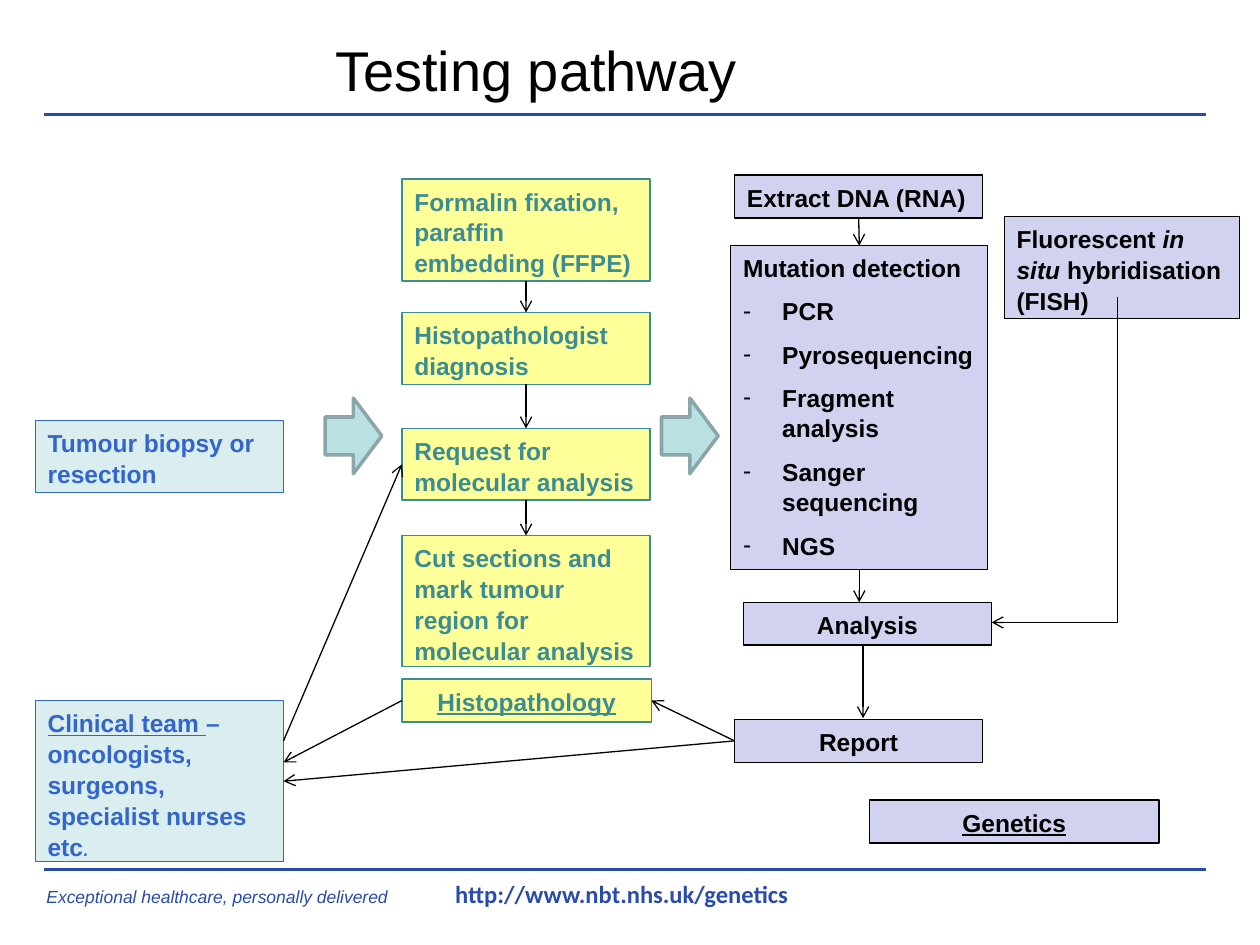
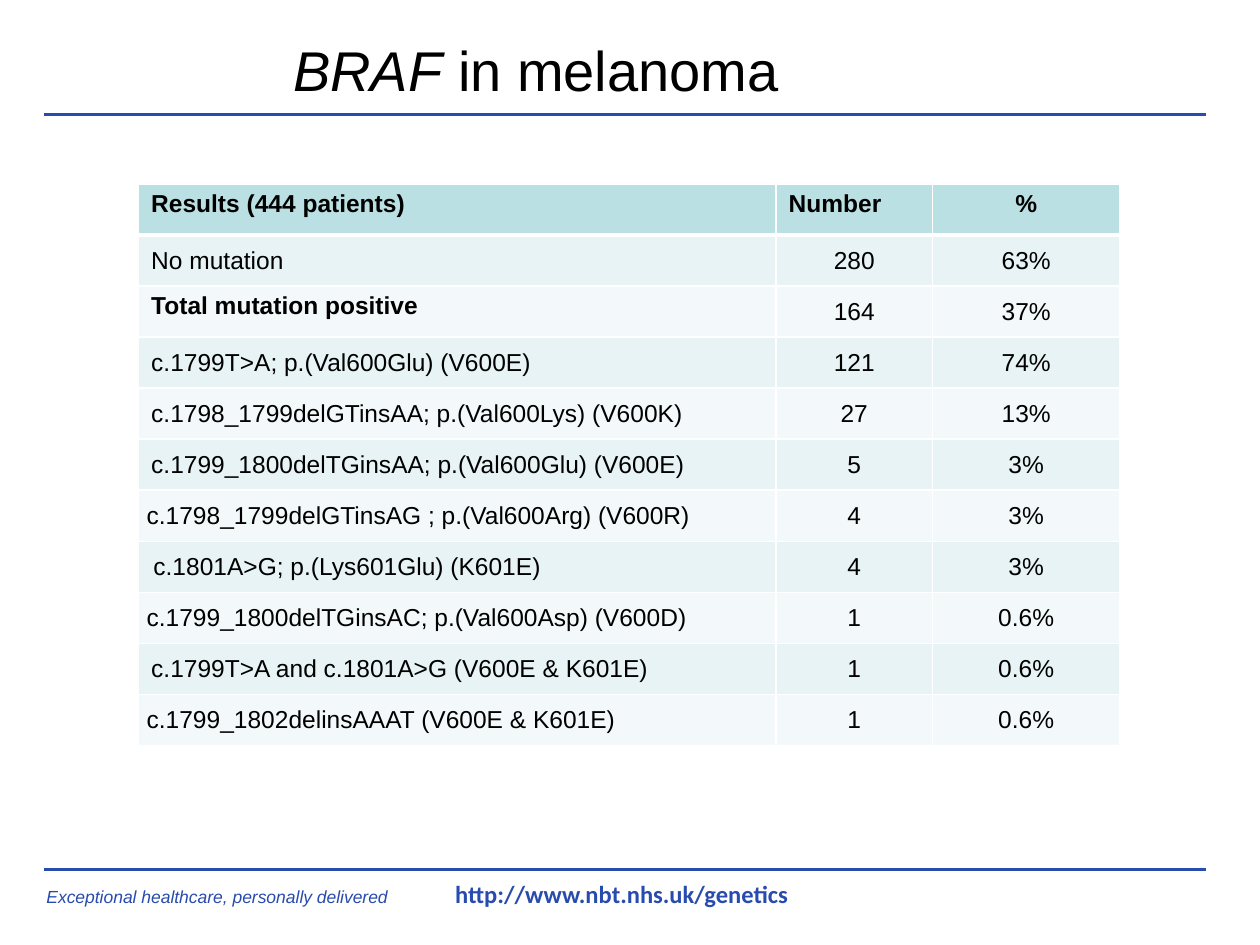
"""Build two slides on molecular testing: the pathway and the BRAF results."""
from dataclasses import dataclass
from typing import NamedTuple, Optional, Union

from lxml import etree
from pptx import Presentation
from pptx.dml.color import RGBColor
from pptx.enum.shapes import MSO_CONNECTOR, MSO_SHAPE
from pptx.enum.text import MSO_ANCHOR, MSO_AUTO_SIZE, PP_ALIGN
from pptx.oxml.ns import qn
from pptx.util import Inches, Pt

STRAIGHT, ELBOW = MSO_CONNECTOR.STRAIGHT, MSO_CONNECTOR.ELBOW
RECTANGLE, RIGHT_ARROW = MSO_SHAPE.RECTANGLE, MSO_SHAPE.RIGHT_ARROW
TOP_ANCHOR, MIDDLE = MSO_ANCHOR.TOP, MSO_ANCHOR.MIDDLE
NO_FIT = MSO_AUTO_SIZE.NONE
LEFT_ALIGN, CENTRE = PP_ALIGN.LEFT, PP_ALIGN.CENTER
TOP, LEFT, BOTTOM, RIGHT = range(4)

BLACK = RGBColor(0x00, 0x00, 0x00)
WHITE = RGBColor(0xFF, 0xFF, 0xFF)
TRUST_BLUE = RGBColor(0x28, 0x4B, 0xAE)
CLINIC_BLUE = RGBColor(0x33, 0x66, 0xCC)
CLINIC_FILL = RGBColor(0xDA, 0xED, 0xEF)
LAB_TEAL = RGBColor(0x3C, 0x8C, 0x93)
LAB_YELLOW = RGBColor(0xFF, 0xFF, 0x99)
GENETICS_LILAC = RGBColor(0xD1, 0xD1, 0xF0)
AQUA = RGBColor(0xBB, 0xE0, 0xE3)
AQUA_EDGE = RGBColor(0x8A, 0xA6, 0xA8)
ODD_ROW = RGBColor(0xE7, 0xF3, 0xF4)
EVEN_ROW = RGBColor(0xF3, 0xF9, 0xFA)

SLIDE_WIDTH, SLIDE_HEIGHT = Inches(10), Inches(7.5)
GRID_COLUMNS = 100
CELL = SLIDE_WIDTH // GRID_COLUMNS
STEP_WIDTH = 19.7
LINE_HEIGHTS = {1: 3.4, 2: 5.7, 3: 8.1, 4: 10.4, 5: 12.8}


class Area(NamedTuple):
    """A rectangle in grid columns and rows."""
    left: float
    top: float
    width: float
    height: float


class Point(NamedTuple):
    """A free point on the grid."""
    column: float
    row: float


class Joint(NamedTuple):
    """The middle of one side of a step."""
    step: str
    side: int


class Piece(NamedTuple):
    """A stretch of text in one style."""
    text: str
    bold: bool = True
    italic: bool = False
    underline: bool = False


class Team(NamedTuple):
    """The colours of the people who do a step."""
    fill: RGBColor
    line: RGBColor
    ink: RGBColor


class Flow(NamedTuple):
    """An arrow between two steps."""
    start: Union[Point, Joint]
    end: Union[Point, Joint]


@dataclass(frozen=True)
class Step:
    """A box of the pathway."""
    name: str
    team: Team
    left: float
    top: float
    lines: int
    pieces: tuple[Piece, ...]
    align: PP_ALIGN = LEFT_ALIGN
    width: float = STEP_WIDTH
    height: Optional[float] = None
    methods: tuple[str, ...] = ()

    @property
    def area(self) -> Area:
        """Give the place of the box, as high as its lines need."""
        return Area(self.left, self.top, self.width, self.height or LINE_HEIGHTS[self.lines])


class Result(NamedTuple):
    """A table row, with the left margin and anchor of its finding."""
    finding: str
    number: str
    share: str
    margin: float = 1
    anchor: MSO_ANCHOR = MIDDLE
    bold: bool = False


CLINIC = Team(CLINIC_FILL, CLINIC_BLUE, CLINIC_BLUE)
LAB = Team(LAB_YELLOW, LAB_TEAL, LAB_TEAL)
GENETICS = Team(GENETICS_LILAC, BLACK, BLACK)

STEPS = (
    Step("mutation", GENETICS, 58, 19.5, 7, (Piece("Mutation detection"),), width=20.4, height=25.7,
         methods=("PCR", "Pyrosequencing", "Fragment analysis", "Sanger sequencing", "NGS")),
    Step("biopsy", CLINIC, 2.8, 33.4, 2, (Piece("Tumour biopsy or resection"),)),
    Step("fixation", LAB, 31.9, 14.2, 3, (Piece("Formalin fixation, paraffin embedding (FFPE)"),)),
    Step("diagnosis", LAB, 31.9, 24.8, 2, (Piece("Histopathologist diagnosis"),)),
    Step("request", LAB, 31.9, 34, 2, (Piece("Request for molecular analysis"),)),
    Step("sections", LAB, 31.9, 42.5, 4,
         (Piece("Cut sections and mark tumour region for molecular analysis"),)),
    Step("extract", GENETICS, 58.3, 13.9, 1, (Piece("Extract DNA (RNA)"),)),
    Step("fish", GENETICS, 79.7, 17.2, 3,
         (Piece("Fluorescent "), Piece("in situ ", italic=True), Piece("hybridisation (FISH)")),
         width=18.7),
    Step("analysis", GENETICS, 59, 47.8, 1, (Piece("Analysis"),), CENTRE),
    Step("report", GENETICS, 58.3, 57.1, 1, (Piece("Report"),), CENTRE),
    Step("clinicians", CLINIC, 2.8, 55.6, 5,
         (Piece("Clinical team ", underline=True),
          Piece("– oncologists, surgeons, specialist nurses etc"),
          Piece(".", bold=False, italic=True))),
    Step("histopathology", LAB, 31.9, 53.9, 1, (Piece("Histopathology", underline=True),), CENTRE,
         width=19.8),
    Step("genetics", GENETICS, 69, 63.5, 1, (Piece("Genetics", underline=True),), CENTRE, width=23),
)

FLOWS = (
    Flow(Joint("fixation", BOTTOM), Joint("diagnosis", TOP)),
    Flow(Joint("diagnosis", BOTTOM), Joint("request", TOP)),
    Flow(Joint("request", BOTTOM), Joint("sections", TOP)),
    Flow(Joint("extract", BOTTOM), Joint("mutation", TOP)),
    Flow(Point(68.5, 51.1), Point(68.5, 57)),
    Flow(Joint("report", LEFT), Joint("histopathology", RIGHT)),
    Flow(Joint("report", LEFT), Joint("clinicians", RIGHT)),
    Flow(Joint("histopathology", LEFT), Point(22.5, 60.5)),
    Flow(Point(22.5, 58.8), Joint("request", LEFT)),
    Flow(Joint("mutation", BOTTOM), Point(68.2, 47.8)),
)

RESULTS = (
    Result("Results (444 patients)", "Number", "%", anchor=TOP_ANCHOR, bold=True),
    Result("No mutation", "280", "63%"),
    Result("Total mutation positive", "164", "37%", anchor=TOP_ANCHOR, bold=True),
    Result("c.1799T>A; p.(Val600Glu) (V600E)", "121", "74%"),
    Result("c.1798_1799delGTinsAA; p.(Val600Lys) (V600K)", "27", "13%"),
    Result("c.1799_1800delTGinsAA; p.(Val600Glu) (V600E)", "5", "3%"),
    Result("c.1798_1799delGTinsAG ; p.(Val600Arg) (V600R)", "4", "3%", 0.64),
    Result("c.1801A>G; p.(Lys601Glu) (K601E)", "4", "3%", 1.18),
    Result("c.1799_1800delTGinsAC; p.(Val600Asp) (V600D)", "1", "0.6%", 0.64),
    Result("c.1799T>A and c.1801A>G (V600E & K601E)", "1", "0.6%"),
    Result("c.1799_1802delinsAAAT (V600E & K601E)", "1", "0.6%", 0.64),
)
RESULT_COLUMNS = (50.6, 12.4, 14.9)


def grid(*cells: float) -> list[int]:
    """Turn grid columns or rows into slide lengths."""
    return [round(count * CELL) for count in cells]


def write(paragraph, pieces: tuple[Piece, ...], size: float, ink: RGBColor,
          align: PP_ALIGN = LEFT_ALIGN, font: str = "Arial") -> None:
    """Fill a paragraph with styled pieces of text."""
    paragraph.text = pieces[0].text
    for piece in pieces[1:]:
        paragraph.add_run().text = piece.text
    paragraph.alignment = align
    for run, piece in zip(paragraph.runs, pieces):
        run.font.name, run.font.size = font, Pt(size)
        run.font.color.rgb = ink
        run.font.bold, run.font.italic = piece.bold, piece.italic
        run.font.underline = piece.underline


def add_label(slide, area: Area, piece: Piece, size: float, align: PP_ALIGN, font: str) -> None:
    """Add a line of footer text."""
    frame = slide.shapes.add_textbox(*grid(*area)).text_frame
    frame.word_wrap = True
    write(frame.paragraphs[0], (piece,), size, TRUST_BLUE, align, font)


def add_line(slide, start: Point, end: Point, ink: RGBColor, weight: float,
             arrow: bool = False, kind: MSO_CONNECTOR = STRAIGHT):
    """Add a line without shadow, with an open arrowhead if asked."""
    connector = slide.shapes.add_connector(kind, *grid(*start, *end))
    connector.line.color.rgb, connector.line.width = ink, Pt(weight)
    if arrow:
        etree.SubElement(connector.line._get_or_add_ln(), qn("a:tailEnd"), type="arrow")
    etree.SubElement(connector._element.spPr, qn("a:effectLst"))
    return connector


def add_block(slide, kind: MSO_SHAPE, area: Area, fill: RGBColor, edge: RGBColor, weight: float):
    """Add a filled and outlined shape."""
    block = slide.shapes.add_shape(kind, *grid(*area))
    block.shadow.inherit = False
    block.fill.solid()
    block.fill.fore_color.rgb = fill
    block.line.color.rgb, block.line.width = edge, Pt(weight)
    return block


def add_step(slide, step: Step):
    """Add a pathway box with its text and list of methods."""
    box = add_block(slide, RECTANGLE, step.area, step.team.fill, step.team.line, 0.75)
    frame = box.text_frame
    frame.word_wrap, frame.vertical_anchor = True, TOP_ANCHOR
    write(frame.paragraphs[0], step.pieces, 14, step.team.ink, step.align)
    for method in step.methods:
        paragraph = frame.add_paragraph()
        properties = paragraph._p.get_or_add_pPr()
        properties.set("marL", str(Inches(0.31)))
        properties.set("indent", str(-Inches(0.31)))
        etree.SubElement(properties, qn("a:buFont"), typeface="Arial")
        etree.SubElement(properties, qn("a:buChar"), char="-")
        write(paragraph, (Piece(method),), 14, step.team.ink)
        paragraph.space_before = Pt(7)
    for paragraph in frame.paragraphs:
        paragraph.line_spacing = 1.05
    return box


def add_flow(slide, flow: Flow, boxes: dict) -> None:
    """Add an arrow, joined to boxes where it meets the middle of a side."""
    start, end = (spot if isinstance(spot, Point) else Point(0, 0) for spot in flow)
    connector = add_line(slide, start, end, BLACK, 0.75, arrow=True)
    for spot, connect in zip(flow, (connector.begin_connect, connector.end_connect)):
        if isinstance(spot, Joint):
            connect(boxes[spot.step], spot.side)


def add_fish_flow(slide) -> None:
    """Add the arrow that turns from hybridisation down to the analysis."""
    connector = add_line(slide, Point(70.8, 31.5), Point(96.6, 41.5), BLACK, 0.75, True, ELBOW)
    properties = connector._element.spPr
    properties.find(qn("a:prstGeom")).set("prst", "bentConnector2")
    properties.find(qn("a:xfrm")).set("rot", str(90 * 60000))


def set_border(cell, side: str, weight: float) -> None:
    """Draw one white border of a table cell."""
    border = etree.Element(qn(f"a:{side}"), w=str(Pt(weight)))
    paint = etree.SubElement(border, qn("a:solidFill"))
    etree.SubElement(paint, qn("a:srgbClr"), val=str(WHITE))
    properties = cell._tc.get_or_add_tcPr()
    properties.insert(len(properties.findall("*")) - 1, border)


def add_results(slide) -> None:
    """Add the table of mutation results."""
    area = Area(11, 14.6, sum(RESULT_COLUMNS), 44.6)
    table = slide.shapes.add_table(len(RESULTS), len(RESULT_COLUMNS), *grid(*area)).table
    table.horz_banding = False
    for column, width in zip(table.columns, grid(*RESULT_COLUMNS)):
        column.width = width
    for index, result in enumerate(RESULTS):
        header = index == 0
        fill = AQUA if header else ODD_ROW if index % 2 else EVEN_ROW
        for position, text in enumerate(result[:3]):
            cell = table.cell(index, position)
            finding = position == 0
            cell.fill.solid()
            cell.fill.fore_color.rgb = fill
            cell.vertical_anchor = result.anchor if finding or header else MIDDLE
            if finding:
                cell.margin_left = grid(result.margin)[0]
            align = LEFT_ALIGN if finding or text == "Number" else CENTRE
            bold = header or (finding and result.bold)
            write(cell.text_frame.paragraphs[0], (Piece(text, bold),), 14, BLACK, align)
            for side in ("lnL", "lnR", "lnT", "lnB"):
                heavy = (header and side == "lnB") or (index == 1 and side == "lnT")
                set_border(cell, side, 3 if heavy else 1)


def add_slide(deck, *title: Piece):
    """Add a slide with the shared title, rules and footer."""
    slide = deck.slides.add_slide(deck.slide_layouts[5])
    heading = slide.shapes.title
    heading.left, heading.top, heading.width, heading.height = grid(4.3, 2.8, 76.5, 5.4)
    heading.text_frame.auto_size, heading.text_frame.vertical_anchor = NO_FIT, MIDDLE
    write(heading.text_frame.paragraphs[0], title, 32, BLACK, CENTRE)
    add_label(slide, Area(2.7, 69.8, 29.9, 2.7),
              Piece("Exceptional healthcare, personally delivered", False, True), 10, LEFT_ALIGN, "Arial")
    for row in (69, 9.1):
        add_line(slide, Point(3.5, row), Point(95.7, row), TRUST_BLUE, 1.5)
    add_label(slide, Area(33.5, 69.3, 31.7, 5.2),
              Piece("http://www.nbt.nhs.uk/genetics"), 14, CENTRE, "Calibri")
    return slide


def main() -> None:
    """Build and save the deck."""
    deck = Presentation()
    deck.slide_width, deck.slide_height = SLIDE_WIDTH, SLIDE_HEIGHT
    pathway = add_slide(deck, Piece("Testing pathway", False))
    boxes = {step.name: add_step(pathway, step) for step in STEPS}
    for left in (25.8, 52.5):
        add_block(pathway, RIGHT_ARROW, Area(left, 31.6, 4.5, 6), AQUA, AQUA_EDGE, 2)
    for flow in FLOWS:
        add_flow(pathway, flow, boxes)
    add_fish_flow(pathway)
    add_results(add_slide(deck, Piece("BRAF", False, True), Piece(" in melanoma", False)))
    deck.save("out.pptx")


if __name__ == "__main__":
    main()
